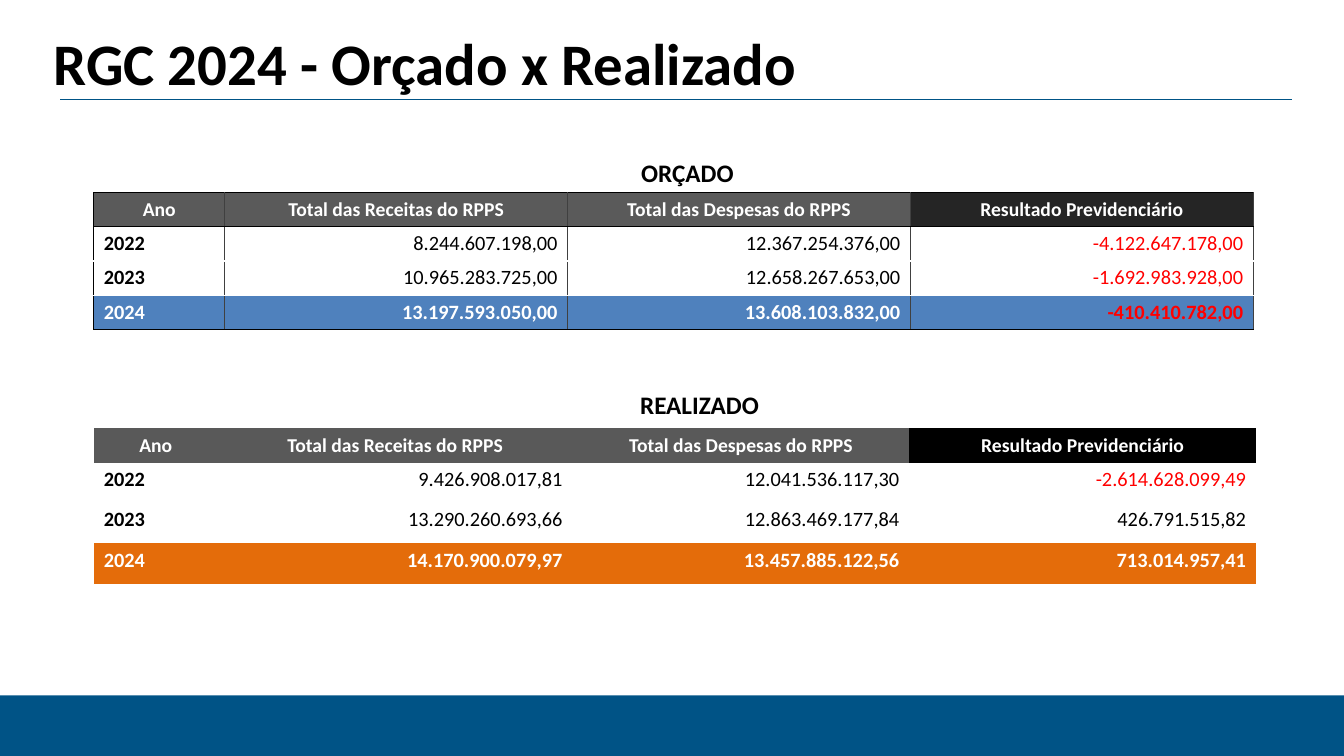
"""Builds the RGC 2024 slide that sets budgeted against realized totals."""
from pptx import Presentation
from pptx.dml.color import RGBColor
from pptx.enum.shapes import MSO_CONNECTOR, MSO_SHAPE
from pptx.enum.text import MSO_ANCHOR, MSO_AUTO_SIZE, PP_ALIGN
from pptx.oxml.ns import qn
from pptx.util import Inches, Pt
from lxml import etree

LEFT, MID, RIGHT = PP_ALIGN.LEFT, PP_ALIGN.CENTER, PP_ALIGN.RIGHT
TOP, NOFIT = MSO_ANCHOR.TOP, MSO_AUTO_SIZE.NONE
RECT, LINE = MSO_SHAPE.RECTANGLE, MSO_CONNECTOR.STRAIGHT
PLAIN = "{2D5ABB26-0587-4C30-8999-92F81FD0307C}"

THEME = {
    "font": "Calibri", "title": 42, "label": 18, "head": 14, "body": 14.5,
    "navy": "005386", "black": "000000", "white": "FFFFFF", "red": "FF0000",
    "edge": "404040",
}
HEADS = ["Ano", "Total das Receitas do RPPS", "Total das Despesas do RPPS",
         "Resultado Previdenciário"]
TABLES = [
    {
        "label": "ORÇADO", "spot": (6.26, 1.51), "top": 1.91,
        "cols": [1.3, 3.4, 3.4, 3.4], "rows": [0.34] * 4, "slots": [0, 1, 2, 3],
        "head": "5A5A5A", "last": "252525", "total": "4F81BD", "lines": True,
        "data": [
            ["2022", "8.244.607.198,00", "12.367.254.376,00", "-4.122.647.178,00"],
            ["2023", "10.965.283.725,00", "12.658.267.653,00", "-1.692.983.928,00"],
            ["2024", "13.197.593.050,00", "13.608.103.832,00", "-410.410.782,00"],
        ],
    },
    {
        "label": "REALIZADO", "spot": (6.25, 3.81), "top": 4.25,
        "cols": [1.23, 0.25, 3.27, 0.38, 2.96, 3.44],
        "rows": [0.34, 0.4, 0.4, 0.4], "slots": [0, 2, 4, 5],
        "head": "595959", "last": "000000", "total": "E46C0A", "lines": False,
        "data": [
            ["2022", "9.426.908.017,81", "12.041.536.117,30", "-2.614.628.099,49"],
            ["2023", "13.290.260.693,66", "12.863.469.177,84", "426.791.515,82"],
            ["2024", "14.170.900.079,97", "13.457.885.122,56", "713.014.957,41"],
        ],
    },
]


def write(frame, text, size, color, bold=True, align=LEFT):
    """Puts one formatted line of text in a frame."""
    frame.text = text
    para = frame.paragraphs[0]
    para.alignment = align
    font = para.runs[0].font
    font.name, font.size, font.bold = THEME["font"], Pt(size), bold
    font.color.rgb = RGBColor.from_string(THEME[color])
    return para


def rule(cell, side, color, width):
    """Draws one border of a table cell."""
    props = cell._tc.get_or_add_tcPr()
    line = etree.SubElement(props, qn("a:ln" + side), w=str(Pt(width)))
    fill = etree.SubElement(line, qn("a:solidFill"))
    etree.SubElement(fill, qn("a:srgbClr"), val=THEME[color])


deck = Presentation()
deck.slide_width, deck.slide_height = Inches(13.33), Inches(7.5)
slide = deck.slides.add_slide(deck.slide_layouts[5])
shapes = slide.shapes
navy = RGBColor.from_string(THEME["navy"])

band = shapes.add_shape(RECT, 0, Inches(6.9), Inches(13.33), Inches(0.6))
band.shadow.inherit = False
band.fill.solid()
band.fill.fore_color.rgb = navy
band.line.fill.background()

line = shapes.add_connector(LINE, Inches(0.6), Inches(0.99), Inches(12.81), Inches(0.99))
line.line.color.rgb = navy
line.line.width = Pt(0.75)
etree.SubElement(line.element.spPr, qn("a:effectLst"))

title = shapes.title
title.left, title.top = Inches(0.5), Inches(0.25)
title.width, title.height = Inches(8.81), Inches(0.72)
frame = title.text_frame
frame.margin_left, frame.margin_top = Inches(0.03), Inches(0.01)
frame.margin_right = frame.margin_bottom = 0
frame.vertical_anchor, frame.auto_size = TOP, NOFIT
write(frame, "RGC 2024 - Orçado x Realizado", THEME["title"], "black")

for plan in TABLES:
    left, top = plan["spot"]
    label = shapes.add_textbox(Inches(left), Inches(top), Inches(2.75), Inches(0.4))
    label.text_frame.word_wrap = True
    write(label.text_frame, plan["label"], THEME["label"], "black")

    cols, rows, slots = plan["cols"], plan["rows"], plan["slots"]
    holder = shapes.add_table(len(rows), len(cols), Inches(0.93), Inches(plan["top"]),
                              Inches(sum(cols)), Inches(sum(rows)))
    table = holder.table
    table.first_row = table.horz_banding = False
    holder.element.find(".//" + qn("a:tableStyleId")).text = PLAIN
    for col, width in zip(table.columns, cols):
        col.width = Inches(width)
    for row, height in zip(table.rows, rows):
        row.height = Inches(height)

    for r in range(len(rows)):
        for c in range(len(cols)):
            cell = table.cell(r, c)
            if plan["lines"]:
                rule(cell, "L", "edge" if c else "black", 0.57 if c else 0.5)
                rule(cell, "R", "edge", 0.57)
                rule(cell, "T", *(("black", 0.57) if r < 2 else ("white", 1)))
                rule(cell, "B", *(("black", 0.57) if r in (0, 3) else ("white", 1)))
            if r in (0, 3):
                tone = plan["total"] if r else plan["head"]
                if r == 0 and c == len(cols) - 1:
                    tone = plan["last"]
                cell.fill.solid()
                cell.fill.fore_color.rgb = RGBColor.from_string(tone)
            else:
                cell.fill.background()

    for r, texts in enumerate([HEADS] + plan["data"]):
        start = 0
        for c, (slot, text) in enumerate(zip(slots, texts)):
            cell = table.cell(r, slot)
            if r == 0:
                cell = table.cell(0, start)
                if start < slot:
                    cell.merge(table.cell(0, slot))
                start = slot + 1
            color = "white" if r in (0, 3) else "black"
            if text.startswith("-"):
                color = "red"
            align = MID if r == 0 else RIGHT if c else LEFT
            size = THEME["body"] if r else THEME["head"]
            para = write(cell.text_frame, text, size, color, r in (0, 3) or c == 0, align)
            para.line_spacing = Pt(17.2)

deck.save("out.pptx")
